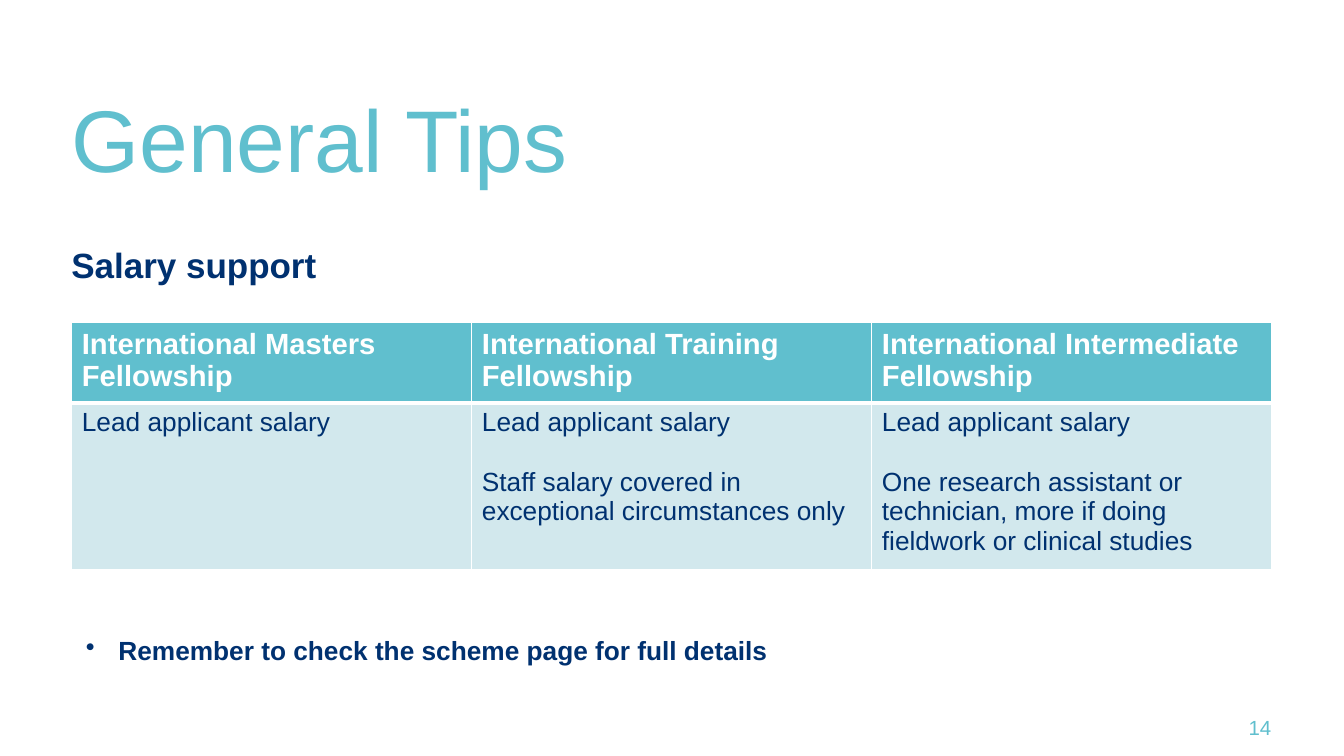
from lxml import etree
from pptx import Presentation
from pptx.dml.color import RGBColor
from pptx.enum import text as t
from pptx.oxml import ns
from pptx.util import Inches, Pt

TEAL, NAVY, PALE, WHITE = "60BFCE", "003170", "D2E8ED", "FFFFFF"
LEFT, WIDTH = 0.68, 11.43

SALARY_SUPPORT = {
    "International Masters Fellowship": ["Lead applicant salary"],
    "International Training Fellowship": [
        "Lead applicant salary",
        "Staff salary covered in exceptional circumstances only"],
    "International Intermediate Fellowship": [
        "Lead applicant salary",
        "One research assistant or technician, more if doing fieldwork or clinical studies"],
}


def colour(hex_code):
    return RGBColor.from_string(hex_code)


def write(frame, paragraphs, size, ink=NAVY, bold=False, align=None, gap=0, bullet=None):
    """Fill a text frame; gap is the space between paragraphs in points."""
    frame.word_wrap = True
    for i, words in enumerate(paragraphs):
        para = frame.paragraphs[0] if i == 0 else frame.add_paragraph()
        if bullet:
            props = para._p.get_or_add_pPr()
            props.set("marL", str(Inches(0.31)))
            props.set("indent", str(-Inches(0.31)))
            etree.SubElement(props, ns.qn("a:buChar"), char=bullet)
        if i:
            para.space_before = Pt(gap)
        if align is not None:
            para.alignment = align
        run = para.add_run()
        run.text = words
        run.font.name, run.font.size, run.font.bold = "Arial", Pt(size), bold
        run.font.color.rgb = colour(ink)


def add_text(slide, box, words, size, inset=True, anchor=t.MSO_ANCHOR.TOP, **fmt):
    frame = slide.shapes.add_textbox(*map(Inches, box)).text_frame
    frame.vertical_anchor = anchor
    if not inset:
        frame.margin_left = frame.margin_right = frame.margin_top = frame.margin_bottom = 0
    write(frame, [words], size, **fmt)


def set_borders(cell, bottom):
    """White rules on all four sides, with their own weight below."""
    props = cell._tc.get_or_add_tcPr()
    weights = {"lnL": 1, "lnR": 1, "lnT": 1, "lnB": bottom}
    for i, (side, weight) in enumerate(weights.items()):
        line = etree.Element(ns.qn(f"a:{side}"), w=str(Pt(weight)))
        fill = etree.SubElement(line, ns.qn("a:solidFill"))
        etree.SubElement(fill, ns.qn("a:srgbClr"), val=WHITE)
        props.insert(i, line)


def fill_cell(cell, paragraphs, back, bottom, **fmt):
    cell.fill.solid()
    cell.fill.fore_color.rgb = colour(back)
    set_borders(cell, bottom)
    write(cell.text_frame, paragraphs, **fmt)


def add_salary_table(slide, box, row_heights):
    table = slide.shapes.add_table(2, len(SALARY_SUPPORT), *map(Inches, box)).table
    for row, height in zip(table.rows, row_heights):
        row.height = Inches(height)
    for col, (scheme, cover) in enumerate(SALARY_SUPPORT.items()):
        table.columns[col].width = Inches(box[2] / len(SALARY_SUPPORT))
        fill_cell(table.cell(0, col), [scheme], TEAL, 3, size=20, ink=WHITE, bold=True)
        fill_cell(table.cell(1, col), cover, PALE, 1, size=18, gap=20.5)


def build_tips_slide(slide):
    # Heading and subheading
    add_text(slide, (LEFT, 0.71, WIDTH, 1.2), "General Tips", 60, inset=False,
             anchor=t.MSO_ANCHOR.MIDDLE, ink=TEAL)
    add_text(slide, (LEFT, 2.32, WIDTH, 0.5), "Salary support", 24, inset=False, bold=True)
    # Fellowship comparison
    add_salary_table(slide, (LEFT, 3.07, WIDTH, 2.22), (0.72, 1.5))
    # Reminder and page number
    add_text(slide, (0.72, 5.99, 11.36, 0.4),
             "Remember to check the scheme page for full details", 18, bold=True, bullet="•")
    add_text(slide, (11.73, 6.74, 0.54, 0.38), "14", 14, ink=TEAL,
             anchor=t.MSO_ANCHOR.MIDDLE, align=t.PP_ALIGN.CENTER)


def main():
    deck = Presentation()
    deck.slide_width, deck.slide_height = Inches(12.8), Inches(7.2)
    build_tips_slide(deck.slides.add_slide(deck.slide_layouts[6]))
    deck.save("out.pptx")


if __name__ == "__main__":
    main()
